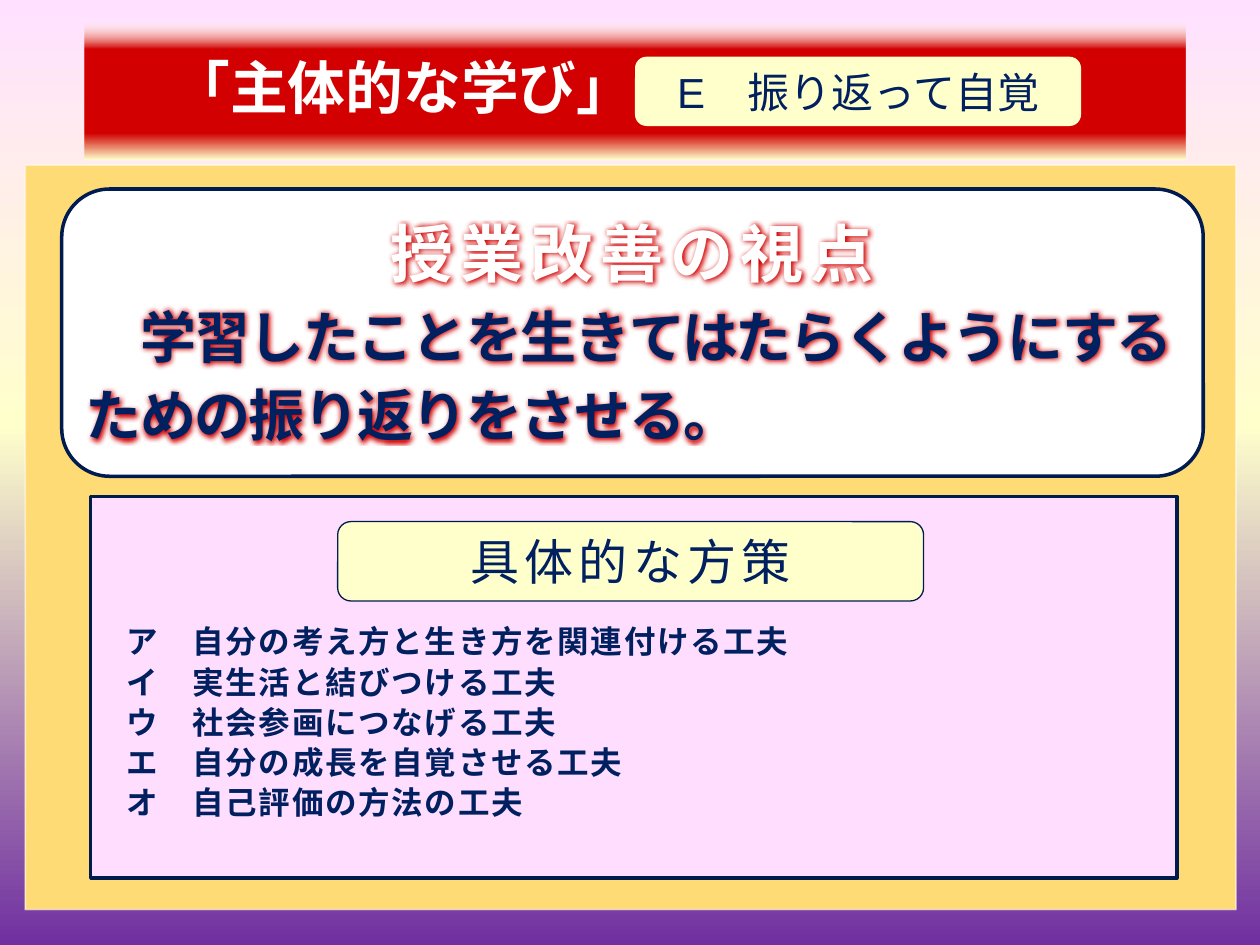
from lxml import etree
from pptx import Presentation
from pptx.dml.color import RGBColor
from pptx.enum.shapes import MSO_SHAPE
from pptx.enum.text import MSO_ANCHOR, MSO_AUTO_SIZE, PP_ALIGN
from pptx.oxml.ns import qn
from pptx.util import Inches, Pt

RECT, ROUNDED = MSO_SHAPE.RECTANGLE, MSO_SHAPE.ROUNDED_RECTANGLE
LEFT, CENTER = PP_ALIGN.LEFT, PP_ALIGN.CENTER
TOP, MIDDLE = MSO_ANCHOR.TOP, MSO_ANCHOR.MIDDLE
CJK = "Noto Sans CJK JP"

COLORS = {
    "white": "FFFFFF", "cream": "FFFFCC", "pink": "FFE1FF", "purple": "7030A0",
    "red": "D20000", "amber": "FFDB75", "lilac": "FFDDFF",
    "navy": "002060", "outline": "001B50",
}

TITLE = "\u3000「主体的な学び」".replace("\u3000", "　")
BADGE = "E　振り返って自覚"
VIEWPOINT_HEADING = "授業改善の視点"
VIEWPOINT = "　学習したことを生きてはたらくようにするための振り返りをさせる。"
MEASURES_HEADING = "具体的な方策"
MEASURES = [
    "ア　自分の考え方と生き方を関連付ける工夫",
    "イ　実生活と結びつける工夫",
    "ウ　社会参画につなげる工夫",
    "エ　自分の成長を自覚させる工夫",
    "オ　自己評価の方法の工夫",
]

# Gradient stops: position in percent, colour, opacity in percent
BACKGROUND_STOPS = [(0, "pink", 100), (45, "cream", 100), (100, "purple", 100)]
TITLE_STOPS = [(0, "cream", 0), (20, "red", 100), (80, "red", 100),
               (99, "cream", 100), (100, "white", 0)]


def rgb(name):
    return RGBColor.from_string(COLORS[name])


def add_color(parent, name, opacity=100):
    color = etree.SubElement(parent, qn("a:srgbClr"), val=COLORS[name])
    if opacity < 100:
        etree.SubElement(color, qn("a:alpha"), val=str(opacity * 1000))


def fill_gradient(fill, properties, stops):
    """Fill from top to bottom with the given stops."""
    fill.gradient()
    gradient = properties.find(qn("a:gradFill"))
    for child in list(gradient):
        gradient.remove(child)
    stop_list = etree.SubElement(gradient, qn("a:gsLst"))
    for position, name, opacity in stops:
        stop = etree.SubElement(stop_list, qn("a:gs"), pos=str(position * 1000))
        add_color(stop, name, opacity)
    etree.SubElement(gradient, qn("a:lin"), ang="5400000", scaled="0")


def place(shape, left, top, width, height):
    shape.left, shape.top = Inches(left), Inches(top)
    shape.width, shape.height = Inches(width), Inches(height)


def paint(shape, fill, line=None, line_width=1):
    shape.fill.solid()
    shape.fill.fore_color.rgb = rgb(fill)
    if line:
        shape.line.color.rgb = rgb(line)
        shape.line.width = Pt(line_width)
    else:
        shape.line.fill.background()


def add_box(slide, kind, bounds, fill, line=None, line_width=1):
    box = slide.shapes.add_shape(kind, *map(Inches, bounds))
    box.shadow.inherit = False
    paint(box, fill, line, line_width)
    return box


def set_frame(shape, anchor=MIDDLE, insets=(0.1, 0.05, 0.1, 0.05)):
    """Set anchor and insets (left, top, right, bottom)."""
    frame = shape.text_frame
    frame.word_wrap = True
    frame.auto_size = MSO_AUTO_SIZE.NONE
    frame.vertical_anchor = anchor
    (frame.margin_left, frame.margin_top,
     frame.margin_right, frame.margin_bottom) = map(Inches, insets)


def write(shape, text, size, color="navy", font="Arial", bold=False,
          align=CENTER, leading=None, tracking=0, glow=0):
    """Write one paragraph, in the first one if it is still empty."""
    frame = shape.text_frame
    paragraph = frame.paragraphs[0] if not frame.text else frame.add_paragraph()
    paragraph.alignment = align
    paragraph.space_before = Pt(0)
    if leading:
        paragraph.line_spacing = leading
    run = paragraph.add_run()
    run.text = text
    run.font.size, run.font.bold = Pt(size), bold
    run.font.color.rgb = rgb(color)
    run.font.name = font
    properties = run.font._element
    latin = properties.find(qn("a:latin"))
    latin.addnext(etree.Element(qn("a:ea"), typeface=CJK))
    if tracking:
        properties.set("spc", str(tracking * 100))
    if glow:
        effects = etree.Element(qn("a:effectLst"))
        halo = etree.SubElement(effects, qn("a:glow"), rad=str(Pt(glow)))
        add_color(halo, "red")
        latin.addprevious(effects)
    return paragraph


def remove_bullet(paragraph):
    properties = paragraph._p.get_or_add_pPr()
    properties.set("marL", "0")
    properties.set("indent", "0")
    etree.SubElement(properties, qn("a:buNone"))


def main():
    prs = Presentation()
    prs.slide_width, prs.slide_height = Inches(10), Inches(7.5)
    slide = prs.slides.add_slide(prs.slide_layouts[1])
    background = slide.background.fill
    fill_gradient(background, slide._element.cSld.bg.bgPr, BACKGROUND_STOPS)

    title = slide.shapes.title
    place(title, 0.67, 0.17, 8.74, 1.1)
    fill_gradient(title.fill, title._element.spPr, TITLE_STOPS)
    set_frame(title, insets=(0.24, 0.05, 0.1, 0.05))
    write(title, TITLE, 33, "white", "Calibri", bold=True, align=LEFT, leading=0.9)

    badge = add_box(slide, ROUNDED, (5.04, 0.45, 3.54, 0.55), "cream")
    set_frame(badge)
    write(badge, BADGE, 24)

    panel = add_box(slide, RECT, (0.2, 1.31, 9.61, 5.91), "amber", "white")
    panel_line = panel.line._ln.find(qn("a:solidFill"))
    panel_line.remove(panel_line[0])
    add_color(panel_line, "white", 50)

    viewpoint = add_box(slide, ROUNDED, (0.49, 1.5, 9.06, 2.28),
                        "white", "outline", 2)
    set_frame(viewpoint, TOP, (0.08, 0, 0.08, 0.05))
    write(viewpoint, VIEWPOINT_HEADING, 36, "white", bold=True,
          leading=Pt(50), tracking=4, glow=5)
    write(viewpoint, VIEWPOINT, 32, font=CJK, bold=True, align=LEFT,
          leading=Pt(45), tracking=-1, glow=5)

    measures = slide.placeholders[1]
    slide.shapes._spTree.append(measures._element)  # in front of the panel
    place(measures, 0.72, 3.94, 8.62, 3.03)
    paint(measures, "lilac", "outline", 2)
    set_frame(measures, TOP, (0.28, 0.98, 0.1, 0.05))
    for measure in MEASURES:
        remove_bullet(write(measures, measure, 18, font=CJK, bold=True,
                            align=LEFT, leading=Pt(23), tracking=1))

    heading = add_box(slide, ROUNDED, (2.68, 4.14, 4.65, 0.63),
                      "cream", "outline", 0.75)
    set_frame(heading)
    write(heading, MEASURES_HEADING, 28, tracking=3)

    prs.save("out.pptx")


if __name__ == "__main__":
    main()
